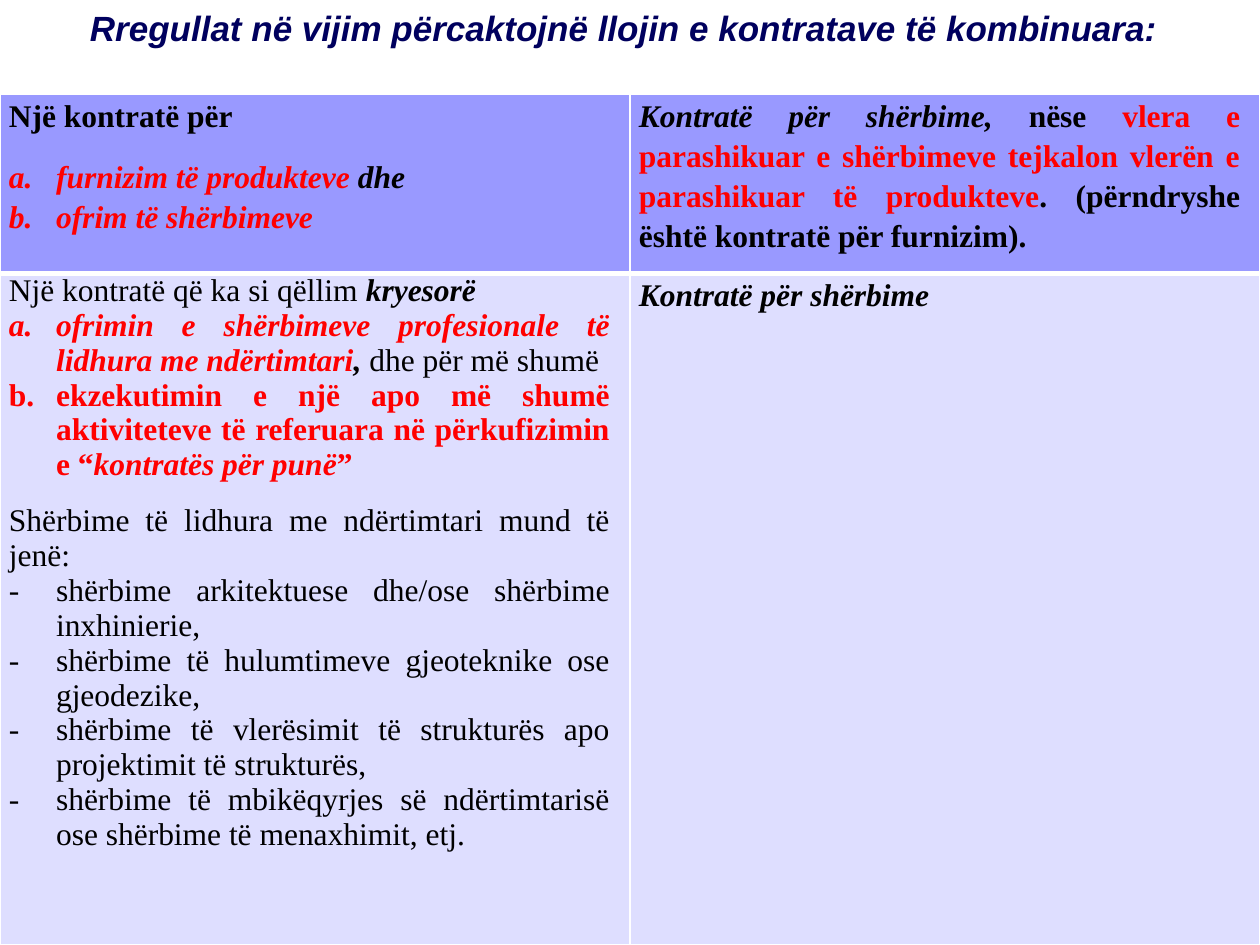
from lxml.etree import SubElement
from pptx import Presentation
from pptx.dml.color import RGBColor
from pptx.enum.text import MSO_ANCHOR, PP_ALIGN
from pptx.oxml.ns import qn
from pptx.util import Cm, Pt

BLACK, RED, WHITE, NAVY = "000000", "FF0000", "FFFFFF", "00005E"
HEADER_FILL, BODY_FILL = "9999FF", "DEDEFF"
LETTER, DASH = "letter", "dash"


def color(value):
    return RGBColor.from_string(value)


class ContractSlide:
    title_font = "Arial"
    body_font = "Times New Roman"
    indent = Cm(0.95)

    def __init__(self, presentation):
        self.slide = presentation.slides.add_slide(presentation.slide_layouts[5])

    def run(self, paragraph, text, style="", font=None, size=18, ink=None):
        """Add a run; style letters are b (bold), i (italic) and r (red)."""
        run = paragraph.add_run()
        run.text = text
        run.font.name = font or self.body_font
        run.font.size = Pt(size)
        run.font.bold = "b" in style
        run.font.italic = "i" in style
        run.font.color.rgb = color(ink or (RED if "r" in style else BLACK))

    def title(self, text):
        shape = self.slide.shapes.title
        shape.left, shape.top, shape.width, shape.height = Cm(0), Cm(0), Cm(25.4), Cm(2.97)
        frame = shape.text_frame
        frame.word_wrap = True
        frame.vertical_anchor = MSO_ANCHOR.TOP
        frame.margin_right = Cm(0.5)
        paragraph = frame.paragraphs[0]
        paragraph.alignment = PP_ALIGN.CENTER
        self.run(paragraph, text, "bi", self.title_font, 20, NAVY)

    def bullet(self, paragraph, kind):
        properties = paragraph._p.get_or_add_pPr()
        properties.set("marL", str(self.indent))
        properties.set("indent", str(-self.indent))
        if kind == LETTER:
            SubElement(properties, qn("a:buFont"), typeface="+mj-lt")
            SubElement(properties, qn("a:buAutoNum"), type="alphaLcPeriod")
        else:
            SubElement(properties, qn("a:buFont"), typeface=self.body_font)
            SubElement(properties, qn("a:buChar"), char="-")

    def borders(self, cell, widths):
        properties = cell._tc.get_or_add_tcPr()
        for side, width in widths.items():
            line = SubElement(properties, qn(f"a:ln{side}"), w=str(Pt(width)))
            SubElement(SubElement(line, qn("a:solidFill")), qn("a:srgbClr"), val=WHITE)

    def cell(self, cell, paragraphs, fill, line_spacing, widths):
        self.borders(cell, widths)
        cell.fill.solid()
        cell.fill.fore_color.rgb = color(fill)
        cell.margin_left, cell.margin_right = Cm(0.18), Cm(0.4)
        cell.margin_top = cell.margin_bottom = 0
        frame = cell.text_frame
        for index, (kind, space, runs) in enumerate(paragraphs):
            paragraph = frame.add_paragraph() if index else frame.paragraphs[0]
            paragraph.alignment = PP_ALIGN.JUSTIFY
            paragraph.line_spacing = line_spacing
            paragraph.space_before = Pt(space)
            if kind:
                self.bullet(paragraph, kind)
            for text, style in runs:
                self.run(paragraph, text, style)

    def table(self, rows):
        frame = self.slide.shapes.add_table(2, 2, Cm(0), Cm(1.9), Cm(25.4), Cm(17.15))
        table = frame.table
        table.first_row = table.horz_banding = False
        for row, height in zip(table.rows, (3.61, 13.54)):
            row.height = Cm(height)
        looks = ((HEADER_FILL, (1.15, 1.15), {"L": 1, "R": 1, "T": 1, "B": 3}),
                 (BODY_FILL, (1.0, 1.15), {"L": 1, "R": 1, "T": 3, "B": 1}))
        for r, (fill, spacings, widths) in enumerate(looks):
            for c, spacing in enumerate(spacings):
                self.cell(table.cell(r, c), rows[r][c], fill, spacing, widths)


SERVICES = (
    "shërbime arkitektuese dhe/ose shërbime inxhinierie,",
    "shërbime të hulumtimeve gjeoteknike ose gjeodezike,",
    "shërbime të vlerësimit të strukturës apo projektimit të strukturës,",
    "shërbime të mbikëqyrjes së ndërtimtarisë ose shërbime të menaxhimit, etj.",
)

# Each paragraph: bullet kind, space before in points, runs
SUPPLY_AND_SERVICES = [
    (None, 0, [("Një kontratë për", "b")]),
    (LETTER, 12, [("furnizim të produkteve", "bir"), (" dhe", "bi")]),
    (LETTER, 0, [("ofrim të shërbimeve", "bir")]),
]
SERVICE_RULE = [
    (None, 0, [
        ("Kontratë për shërbime,", "bi"), (" nëse ", "b"),
        ("vlera e parashikuar e shërbimeve tejkalon vlerën e parashikuar të produkteve", "br"),
        (". (përndryshe është kontratë për furnizim).", "b")]),
]
CONSTRUCTION_SERVICES = [
    (None, 0, [("Një kontratë që ka si qëllim ", ""), ("kryesorë", "bi")]),
    (LETTER, 0, [
        ("ofrimin e shërbimeve profesionale të lidhura me ndërtimtari", "bir"),
        (",", "bi"), (" dhe për më shumë", "")]),
    (LETTER, 0, [
        ("ekzekutimin e një apo më shumë aktiviteteve të referuara në përkufizimin e “", "br"),
        ("kontratës për punë", "bir"), ("”", "br")]),
    (None, 12, [("Shërbime të lidhura me ndërtimtari mund të jenë:", "")]),
    *[(DASH, 0, [(service, "")]) for service in SERVICES],
]
SERVICE_CONTRACT = [(None, 0, [("Kontratë për shërbime", "bi")])]


def main():
    presentation = Presentation()
    presentation.slide_width, presentation.slide_height = Cm(25.4), Cm(19.05)
    slide = ContractSlide(presentation)
    slide.title("Rregullat në vijim përcaktojnë llojin e kontratave të kombinuara:")
    slide.table([[SUPPLY_AND_SERVICES, SERVICE_RULE],
                 [CONSTRUCTION_SERVICES, SERVICE_CONTRACT]])
    presentation.save("out.pptx")


if __name__ == "__main__":
    main()
